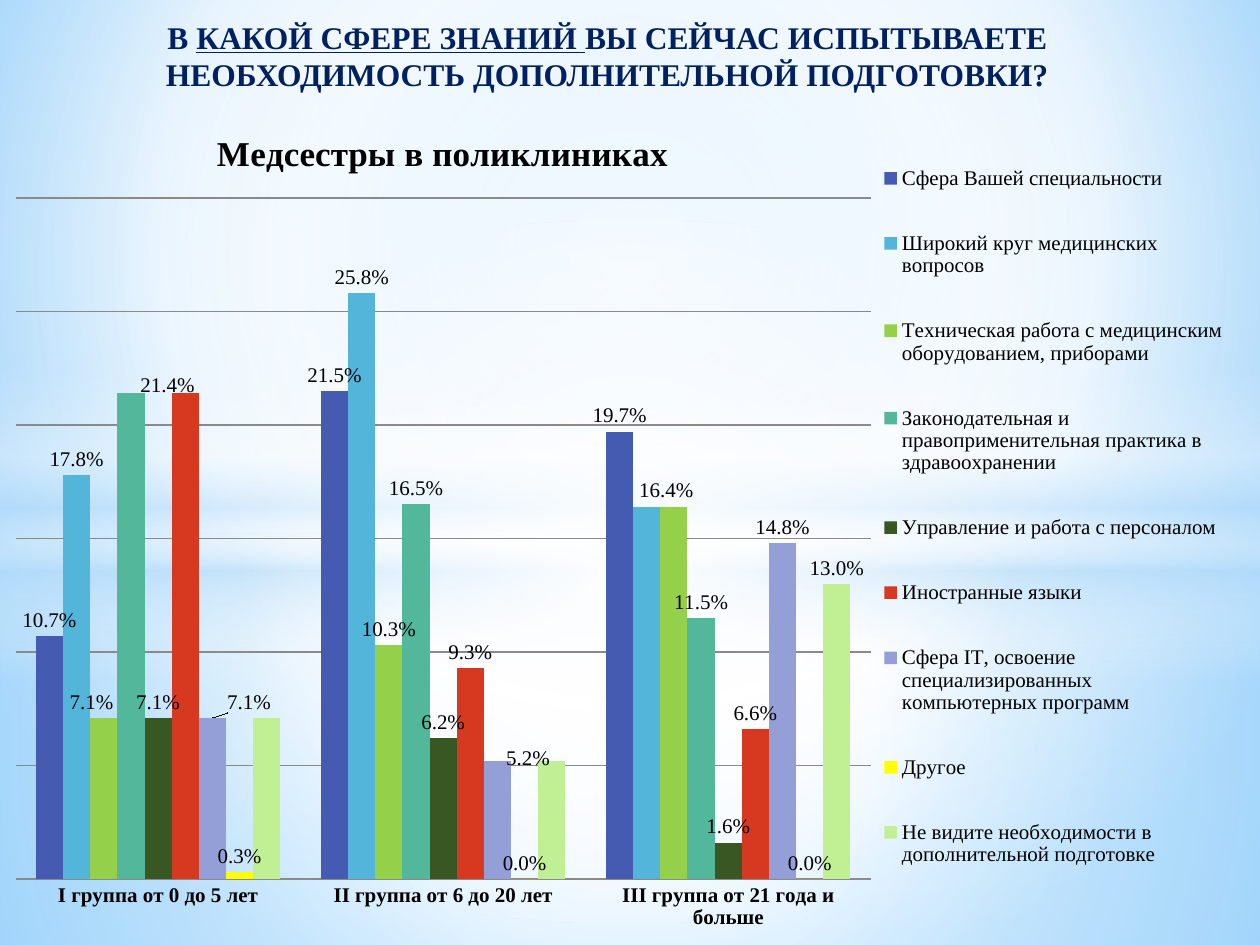
import pptx
import pptx.chart.data
import pptx.dml.color
import pptx.enum.chart
import pptx.enum.shapes
import pptx.enum.text
import pptx.oxml
import pptx.oxml.ns
import pptx.util

Cm = pptx.util.Cm
Pt = pptx.util.Pt
RGB = pptx.dml.color.RGBColor
qn = pptx.oxml.ns.qn
Shape = pptx.enum.shapes.MSO_SHAPE

FONT = "Times New Roman"
NAVY = RGB(0x00, 0x20, 0x60)
BLACK = RGB(0x00, 0x00, 0x00)
GRID = RGB(0x8A, 0x8A, 0x8A)
WHITE = RGB(0xFF, 0xFF, 0xFF)
PALE = RGB(0xB4, 0xDC, 0xFA)
SKY = RGB(0x9E, 0xD5, 0xFF)
DEEP_SKY = RGB(0x5B, 0xB9, 0xFF)

CATEGORIES = ["I группа от 0 до 5 лет", "II группа от 6 до 20 лет",
              "III группа от 21 года и больше"]
# Name, values, colour, then labels by group: a shift (x, y), or None to hide
SERIES = [
    ("Сфера Вашей специальности",
     (0.107, 0.215, 0.197), RGB(0x45, 0x5B, 0xB1), {}),
    ("Широкий круг медицинских вопросов",
     (0.178, 0.258, 0.164), RGB(0x53, 0xB5, 0xD9), {2: (0.016, 0)}),
    ("Техническая работа с медицинским оборудованием, приборами ",
     (0.071, 0.103, 0.164), RGB(0x94, 0xD0, 0x4A), {0: (-0.01, 0), 2: None}),
    ("Законодательная и правоприменительная практика в здравоохранении",
     (0.214, 0.165, 0.115), RGB(0x53, 0xB7, 0x9C), {0: (0.03, 0.01)}),
    ("Управление и работа с персоналом",
     (0.071, 0.062, 0.016), RGB(0x38, 0x57, 0x23), {}),
    ("Иностранные языки",
     (0.214, 0.093, 0.066), RGB(0xD7, 0x38, 0x20), {0: None}),
    ("Сфера IT, освоение специализированных компьютерных программ",
     (0.071, 0.052, 0.148), RGB(0x94, 0x9F, 0xD8),
     {0: (0.03, 0), 1: (0.025, 0.016)}),
    ("Другое", (0.003, 0, 0), RGB(0xFF, 0xFF, 0x00), {}),
    ("Не видите необходимости в дополнительной подготовке",
     (0.071, 0.052, 0.13), RGB(0xC1, 0xF0, 0x94), {0: None, 1: None}),
]


def fill_gradient(element, fill, stops, focus=None):
    """Stops are (position, colour, opacity); without a focus it runs down."""
    fill.gradient()
    old = next(element.iter(qn("a:gradFill")))
    marks = "".join(
        f'<a:gs pos="{place * 1000}"><a:srgbClr val="{color}">'
        f'<a:alpha val="{opacity * 1000}"/></a:srgbClr></a:gs>'
        for place, color, opacity in stops)
    if focus:
        left, top, right, bottom = (side * 1000 for side in focus)
        course = (f'<a:path path="circle"><a:fillToRect l="{left}" t="{top}" '
                  f'r="{right}" b="{bottom}"/></a:path>')
    else:
        course = '<a:lin ang="5400000" scaled="0"/>'
    old.getparent().replace(old, pptx.oxml.parse_xml(
        f'<a:gradFill {pptx.oxml.ns.nsdecls("a")} rotWithShape="1">'
        f'<a:gsLst>{marks}</a:gsLst>{course}</a:gradFill>'))


def add_glow(page, kind, top, height, stops, focus=None):
    glow = page.shapes.add_shape(kind, 0, Cm(top), Cm(25.4), Cm(height))
    glow.shadow.inherit = False
    glow.line.fill.background()
    fill_gradient(glow._element, glow.fill, stops, focus)


def add_heading(page):
    box = page.shapes.add_textbox(Cm(1.5), Cm(0.23), Cm(21.49), Cm(1.8))
    box.text_frame.word_wrap = True
    para = box.text_frame.paragraphs[0]
    para.alignment = pptx.enum.text.PP_ALIGN.CENTER
    for text, underlined in (
            ("В ", False), ("КАКОЙ СФЕРЕ ЗНАНИЙ ", True),
            ("ВЫ СЕЙЧАС ИСПЫТЫВАЕТЕ НЕОБХОДИМОСТЬ ДОПОЛНИТЕЛЬНОЙ ПОДГОТОВКИ?",
             False)):
        span = para.add_run()
        span.text = text
        style_font(span.font, 18, NAVY, True)
        span.font.underline = underlined


def style_font(font, size, color=BLACK, bold=False):
    font.name = FONT
    font.size = Pt(size)
    font.bold = bold
    font.color.rgb = color


def set_layout(parent, index, x, y, width=None, height=None, inner=False):
    """Place a chart part by fractions of the chart's size."""
    for old in parent.findall(qn("c:layout")):
        parent.remove(old)
    parts = '<c:layoutTarget val="inner"/>' if inner else ""
    parts += '<c:xMode val="edge"/><c:yMode val="edge"/>'
    for tag, value in zip("xywh", (x, y, width, height)):
        if value is not None:
            parts += f'<c:{tag} val="{value}"/>'
    parent.insert(index, pptx.oxml.parse_xml(
        f'<c:layout {pptx.oxml.ns.nsdecls("c")}><c:manualLayout>{parts}'
        '</c:manualLayout></c:layout>'))


def label_series(series, exceptions):
    labels = series.data_labels
    labels.show_value = True
    labels.number_format = "0.0%"
    labels.number_format_is_linked = False
    labels.position = pptx.enum.chart.XL_LABEL_POSITION.OUTSIDE_END
    style_font(labels.font, 12)
    for order, (group, shift) in enumerate(sorted(exceptions.items())):
        if shift is None:
            content = '<c:delete val="1"/>'
        else:
            flags = "".join(
                f'<c:show{name} val="{int(name == "Val")}"/>' for name in
                ("LegendKey", "Val", "CatName", "SerName", "Percent",
                 "BubbleSize"))
            content = (f'<c:layout><c:manualLayout><c:x val="{shift[0]}"/>'
                       f'<c:y val="{shift[1]}"/></c:manualLayout></c:layout>'
                       f'<c:dLblPos val="outEnd"/>{flags}')
        labels._element.insert(order, pptx.oxml.parse_xml(
            f'<c:dLbl {pptx.oxml.ns.nsdecls("c")}>'
            f'<c:idx val="{group}"/>{content}</c:dLbl>'))


def add_survey_chart(page):
    data = pptx.chart.data.CategoryChartData(number_format="0.0%")
    data.categories = CATEGORIES
    for name, values, _, _ in SERIES:
        data.add_series(name, values)
    chart = page.shapes.add_chart(
        pptx.enum.chart.XL_CHART_TYPE.COLUMN_CLUSTERED,
        Cm(0.3), Cm(2.18), Cm(24.61), Cm(16.54), data).chart
    style_font(chart.font, 12)

    # Title
    chart.has_title = True
    span = chart.chart_title.text_frame.paragraphs[0].add_run()
    span.text = "Медсестры в поликлиниках"
    style_font(span.font, 20, bold=True)
    set_layout(chart.chart_title._element, 1, 0.16, 0.02)

    # Columns
    plot = chart.plots[0]
    plot.gap_width = 150
    plot.overlap = 0
    plot.vary_by_categories = False
    for series, (_, _, color, exceptions) in zip(plot.series, SERIES):
        series.format.fill.solid()
        series.format.fill.fore_color.rgb = color
        series.invert_if_negative = False
        label_series(series, exceptions)
    set_layout(plot._element.getparent(), 0, 0, 0.11, 0.701, 0.834, inner=True)

    # Axes
    value_axis = chart.value_axis
    value_axis.visible = False
    value_axis.minimum_scale, value_axis.maximum_scale = 0, 0.3
    value_axis.major_unit = 0.05
    value_axis.has_major_gridlines = True
    category_axis = chart.category_axis
    category_axis.major_tick_mark = pptx.enum.chart.XL_TICK_MARK.NONE
    style_font(category_axis.tick_labels.font, 12, bold=True)
    for line in (value_axis.major_gridlines.format.line,
                 category_axis.format.line):
        line.color.rgb = GRID
        line.width = Pt(0.75)

    # Legend
    chart.has_legend = True
    chart.legend.position = pptx.enum.chart.XL_LEGEND_POSITION.RIGHT
    chart.legend.include_in_layout = False
    style_font(chart.legend.font, 12)
    set_layout(chart.legend._element, 1, 0.72, 0.02, 0.28, 0.96)


def main():
    deck = pptx.Presentation()
    deck.slide_width, deck.slide_height = Cm(25.4), Cm(19.05)
    page = deck.slides.add_slide(deck.slide_layouts[6])

    # Backdrop of soft light
    center = (50, 50, 50, 50)
    fill_gradient(page._element, page.background.fill,
                  [(0, SKY, 100), (60, WHITE, 100), (100, DEEP_SKY, 100)],
                  (20, 10, 20, 60))
    add_glow(page, Shape.RECTANGLE, 10.74, 8.31,
             [(0, WHITE, 91), (37, WHITE, 76), (100, PALE, 79)], center)
    add_glow(page, Shape.RECTANGLE, 0, 10.74,
             [(0, WHITE, 89), (48, WHITE, 62), (100, PALE, 79)], center)
    add_glow(page, Shape.RECTANGLE, 7.37, 6.35,
             [(0, WHITE, 0), (29, WHITE, 30), (45, PALE, 40),
              (55, WHITE, 26), (65, PALE, 60), (100, WHITE, 0)])
    add_glow(page, Shape.OVAL, 4.45, 14.17,
             [(0, WHITE, 100), (54, WHITE, 0)], center)

    add_survey_chart(page)
    add_heading(page)
    deck.save("out.pptx")


if __name__ == "__main__":
    main()
